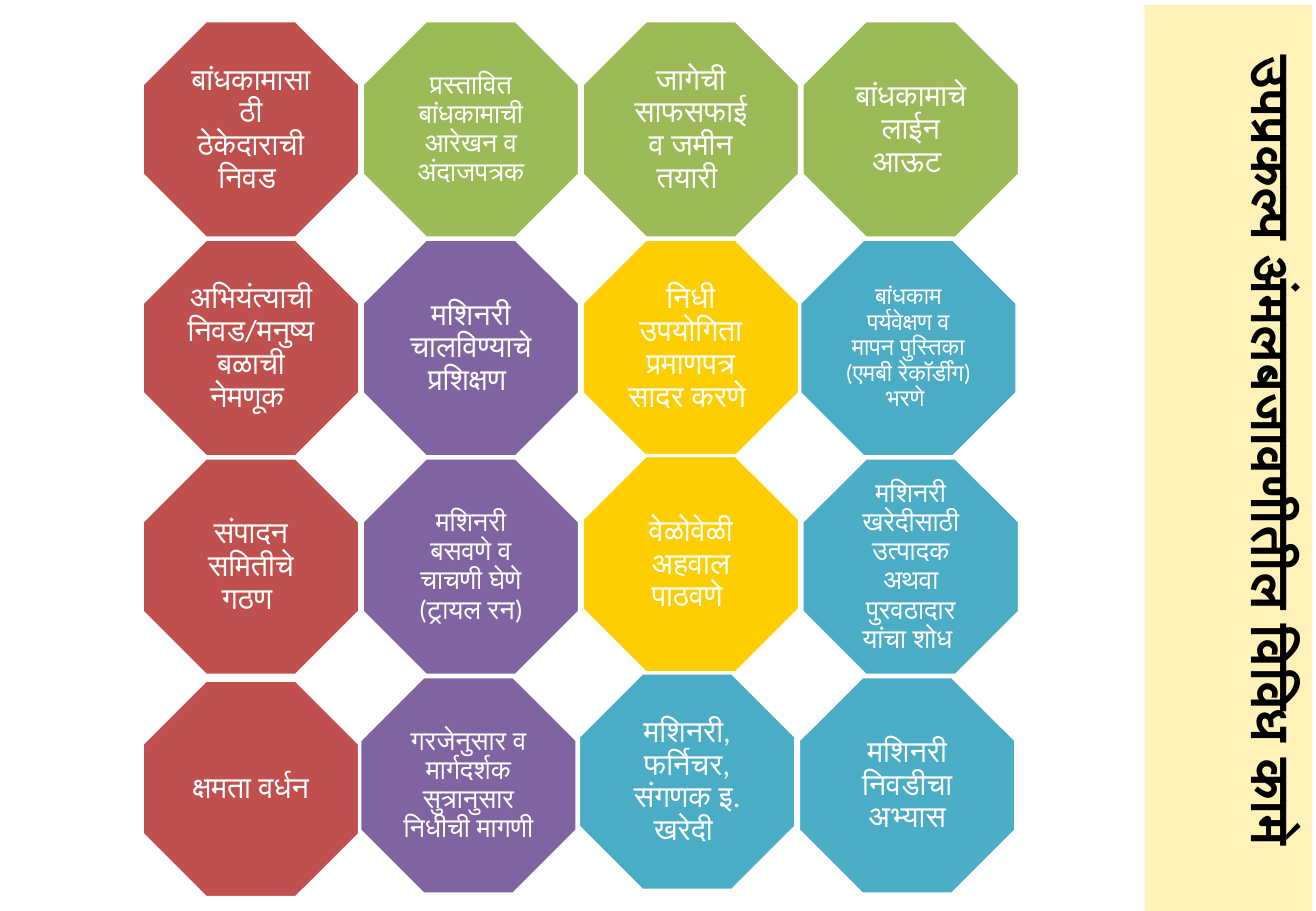
from pptx import Presentation
from pptx.dml.color import RGBColor
from pptx.enum.shapes import MSO_SHAPE
from pptx.enum.text import MSO_ANCHOR, MSO_AUTO_SIZE, PP_ALIGN
from pptx.util import Inches, Pt

OCTAGON = MSO_SHAPE.OCTAGON
MIDDLE, TOP = MSO_ANCHOR.MIDDLE, MSO_ANCHOR.TOP
CENTER = PP_ALIGN.CENTER
NO_AUTOFIT = MSO_AUTO_SIZE.NONE
TITLE_ONLY = 5

FONT = "Calibri"
COLORS = {
    "red": "C0504D",
    "green": "9BBB59",
    "purple": "8064A2",
    "yellow": "FECE00",
    "blue": "4BACC6",
    "cream": "FFF2B9",
    "white": "FFFFFF",
    "black": "000000",
}

TITLE = "उपप्रकल्प अंमलबजावणीतील विविध कामे "
TASKS = [
    [("बांधकामासाठी ठेकेदाराची निवड ", 18, "red"),
     ("प्रस्तावित बांधकामाची आरेखन व अंदाजपत्रक", 16, "green"),
     ("जागेची साफसफाई व जमीन तयारी ", 18, "green"),
     ("बांधकामाचे लाईन आऊट ", 18, "green")],
    [("अभियंत्याची निवड/मनुष्यबळाची नेमणूक ", 18, "red"),
     ("मशिनरी चालविण्याचे प्रशिक्षण ", 18, "purple"),
     ("निधी उपयोगिता प्रमाणपत्र सादर करणे ", 18, "yellow"),
     ("बांधकाम पर्यवेक्षण व मापन पुस्तिका (एमबी रेकॉर्डींग) भरणे ", 14, "blue")],
    [("संपादन समितीचे गठण ", 18, "red"),
     ("मशिनरी बसवणे व चाचणी घेणे (ट्रायल रन)", 16, "purple"),
     ("वेळोवेळी अहवाल पाठवणे ", 18, "yellow"),
     ("मशिनरी खरेदीसाठी उत्पादक अथवा पुरवठादार यांचा शोध ", 16, "blue")],
    [("क्षमता वर्धन", 18, "red"),
     ("गरजेनुसार व मार्गदर्शक सुत्रानुसार निधीची मागणी", 16, "purple"),
     ("मशिनरी, फर्निचर, संगणक इ. खरेदी ", 18, "blue"),
     ("मशिनरी निवडीचा अभ्यास", 18, "blue")],
]
NUDGES = {
    (1, 3): (-0.02, 0),
    (2, 2): (0, -0.02),
    (3, 0): (0, 0.03),
    (3, 1): (-0.02, 0),
    (3, 2): (-0.03, -0.03),
    (3, 3): (-0.03, 0),
}


def color(name):
    return RGBColor.from_string(COLORS[name])


def write_text(shape, text, size, ink, anchor, bold=False):
    frame = shape.text_frame
    frame.text = text
    frame.word_wrap = True
    frame.auto_size = NO_AUTOFIT
    frame.vertical_anchor = anchor
    para = frame.paragraphs[0]
    para.alignment = CENTER
    font = para.runs[0].font
    font.name = FONT
    font.size = Pt(size)
    font.bold = bold
    font.color.rgb = color(ink)
    return para


def add_side_title(page, box):
    left, top, width, height = box
    title = page.shapes.title
    title.left = Inches(left + (width - height) / 2)
    title.top = Inches(top + (height - width) / 2)
    title.width, title.height = Inches(height), Inches(width)
    title.rotation = 90
    title.fill.solid()
    title.fill.fore_color.rgb = color("cream")
    write_text(title, TITLE, 32, "black", TOP, bold=True)


def add_task(page, box, text, size, fill):
    octagon = page.shapes.add_shape(OCTAGON, *map(Inches, box))
    octagon.shadow.inherit = False
    octagon.fill.solid()
    octagon.fill.fore_color.rgb = color(fill)
    octagon.line.color.rgb = color("white")
    octagon.line.width = Pt(2)
    para = write_text(octagon, text, size, "white", MIDDLE)
    para.line_spacing = 0.9


def add_task_grid(page, box):
    left, top, width, height = box
    side = 1.79
    column_step = (width - side) / (len(TASKS[0]) - 1)
    row_step = (height - side) / (len(TASKS) - 1)
    for row, tasks in enumerate(TASKS):
        for column, task in enumerate(tasks):
            shift_x, shift_y = NUDGES.get((row, column), (0, 0))
            x = left + column * column_step + shift_x
            y = top + row * row_step + shift_y
            add_task(page, (x, y, side, side), *task)


def main():
    deck = Presentation()
    deck.slide_width, deck.slide_height = Inches(10.83), Inches(7.5)
    page = deck.slides.add_slide(deck.slide_layouts[TITLE_ONLY])
    add_task_grid(page, (1.17, 0.17, 7.22, 7.19))
    add_side_title(page, (9.42, 0.04, 1.38, 7.46))
    deck.save("out.pptx")


if __name__ == "__main__":
    main()
